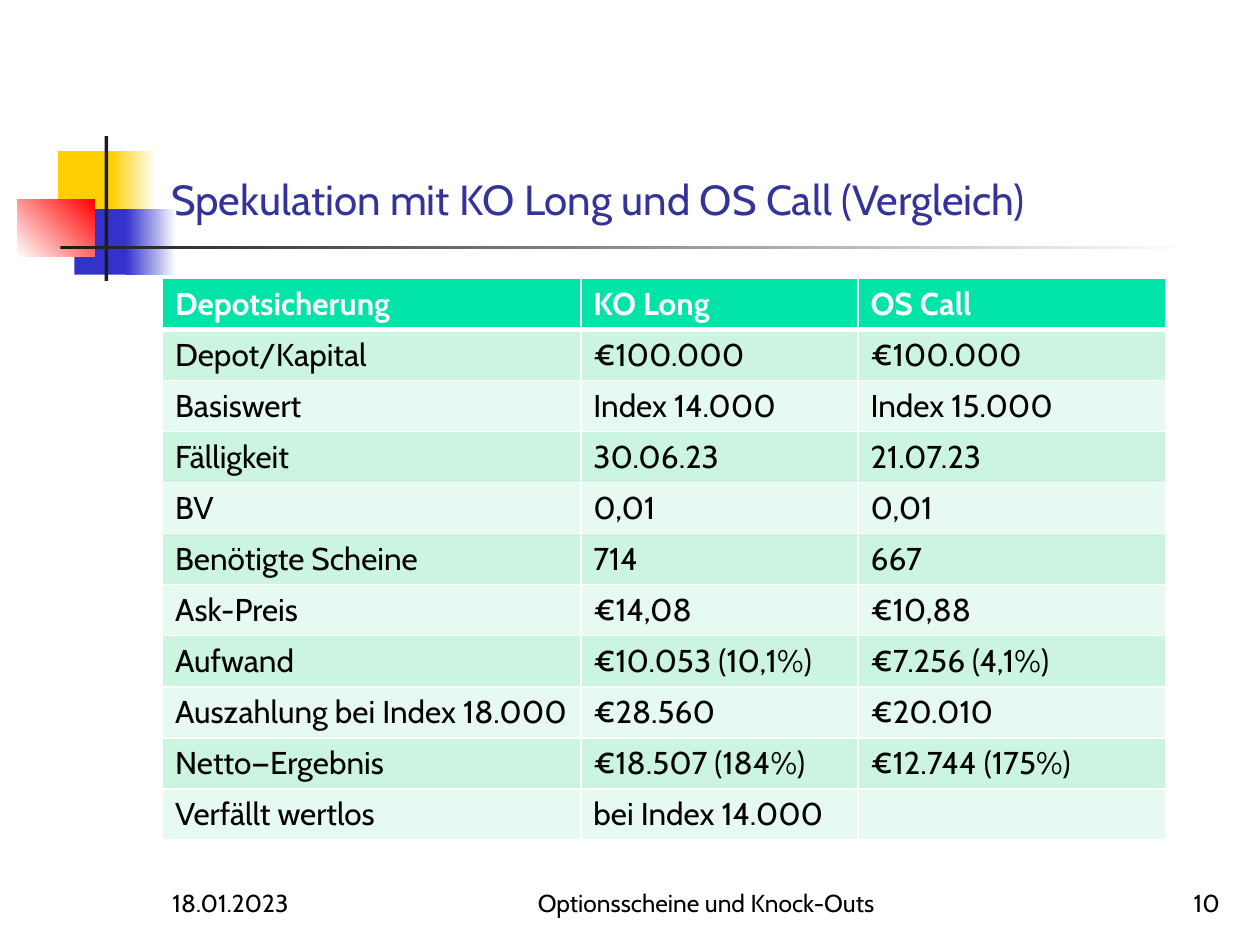
from lxml.etree import SubElement
from pptx import Presentation
from pptx.dml.color import RGBColor
from pptx.enum.shapes import MSO_SHAPE as SHAPE
from pptx.enum.text import MSO_ANCHOR as ANCHOR, PP_ALIGN as ALIGN
from pptx.oxml.ns import qn
from pptx.util import Inches, Pt

FONT = "Cabin"
WHITE = RGBColor(0xFF, 0xFF, 0xFF)
BLACK = RGBColor(0x00, 0x00, 0x00)
CHARCOAL = RGBColor(0x1C, 0x1C, 0x1C)
YELLOW = RGBColor(0xFF, 0xCF, 0x01)
BLUE = RGBColor(0x33, 0x33, 0xCC)
RED = RGBColor(0xFF, 0x00, 0x00)
INDIGO = RGBColor(0x33, 0x33, 0x99)
GREEN = RGBColor(0x00, 0xE4, 0xA8)
MINT = RGBColor(0xCC, 0xF5, 0xE1)
PALE_MINT = RGBColor(0xE7, 0xFA, 0xF1)

WIDTH, HEIGHT = Inches(10), Inches(7.5)
GRID_COLS, GRID_ROWS = 1000, 750

ROWS = [
    ("Depotsicherung", "KO Long", "OS Call"),
    ("Depot/Kapital", "€100.000", "€100.000"),
    ("Basiswert", "Index 14.000", "Index 15.000"),
    ("Fälligkeit", "30.06.23", "21.07.23"),
    ("BV", "0,01", "0,01"),
    ("Benötigte Scheine", "714", "667"),
    ("Ask-Preis", "€14,08", "€10,88"),
    ("Aufwand", "€10.053 (10,1%)", "€7.256 (4,1%)"),
    ("Auszahlung bei Index 18.000", "€28.560", "€20.010"),
    ("Netto—Ergebnis", "€18.507 (184%)", "€12.744 (175%)"),
    ("Verfällt wertlos", "bei Index 14.000", ""),
]
COLUMN_SHARES = (332, 220, 244)


def place(col, row, cols, rows):
    x, y = WIDTH / GRID_COLS, HEIGHT / GRID_ROWS
    return [round(v) for v in (col * x, row * y, cols * x, rows * y)]


def write(tf, text, size=14, color=BLACK, bold=False, align=ALIGN.LEFT):
    p = tf.paragraphs[0]
    p.alignment = align
    r = p.add_run()
    r.text = text
    r.font.name = FONT
    r.font.size = Pt(size)
    r.font.bold = bold
    r.font.color.rgb = color


def add_block(s, box, start, end=None, angle=0):
    sp = s.shapes.add_shape(SHAPE.RECTANGLE, *place(*box))
    sp.shadow.inherit = False
    sp.line.fill.background()
    if end is None:
        sp.fill.solid()
        sp.fill.fore_color.rgb = start
        return
    sp.fill.gradient()
    sp.fill.gradient_angle = angle
    for stop, color, position in zip(sp.fill.gradient_stops, (start, end), (0, 1)):
        stop.color.rgb = color
        stop.position = position


def add_emblem(s, box):
    left, top, width, height = box
    for col, row, cols, rows, *colors in (
        (32, 12, 48, 52, YELLOW),
        (74, 12, 36, 52, YELLOW, WHITE),
        (45, 58, 46, 52, BLUE),
        (86, 58, 40, 52, BLUE, WHITE),
        (0, 50, 61, 46, WHITE, RED, 45),
        (69, 0, 3, height, CHARCOAL),
        (34, 87, width - 34, 3, CHARCOAL, WHITE),
    ):
        add_block(s, (left + col, top + row, cols, rows), *colors)


def add_title(s, box, text):
    title = s.shapes.title
    title.left, title.top, title.width, title.height = place(*box)
    title.text_frame.vertical_anchor = ANCHOR.BOTTOM
    title.text_frame.word_wrap = True
    write(title.text_frame, text, size=24, color=INDIGO)


def add_footer(s, box):
    left, top, width, height = box
    for col, cols, text, align in (
        (0, 208, "18.01.2023", ALIGN.LEFT),
        (275, 317, "Optionsscheine und Knock-Outs", ALIGN.CENTER),
        (width - 208, 208, "10", ALIGN.RIGHT),
    ):
        sp = s.shapes.add_textbox(*place(left + col, top, cols, height))
        tf = sp.text_frame
        tf.word_wrap = True
        tf.vertical_anchor = ANCHOR.BOTTOM
        write(tf, text, align=align)


def add_borders(cell, top, bottom):
    tc_pr = cell._tc.get_or_add_tcPr()
    for side, width in (("L", 1), ("R", 1), ("T", top), ("B", bottom)):
        ln = SubElement(tc_pr, qn(f"a:ln{side}"), w=str(Pt(width)))
        fill = SubElement(ln, qn("a:solidFill"))
        SubElement(fill, qn("a:srgbClr"), val=str(WHITE))


def add_comparison(s, box):
    x, y, w, h = place(*box)
    table = s.shapes.add_table(len(ROWS), len(COLUMN_SHARES), x, y, w, h).table
    for column, share in zip(table.columns, COLUMN_SHARES):
        column.width = round(w * share / sum(COLUMN_SHARES))
    for i, texts in enumerate(ROWS):
        table.rows[i].height = round(h / len(ROWS))
        header = i == 0
        fill = GREEN if header else (PALE_MINT, MINT)[i % 2]
        for j, text in enumerate(texts):
            cell = table.cell(i, j)
            add_borders(cell, top=3 if i == 1 else 1, bottom=3 if header else 1)
            cell.fill.solid()
            cell.fill.fore_color.rgb = fill
            if text:
                write(cell.text_frame, text, size=18, bold=header,
                      color=WHITE if header else BLACK)


def main():
    prs = Presentation()
    prs.slide_width, prs.slide_height = WIDTH, HEIGHT
    s = prs.slides.add_slide(prs.slide_layouts[5])
    add_emblem(s, (14, 108, 934, 115))
    add_title(s, (126, 23, 852, 160), "Spekulation mit KO Long und OS Call (Vergleich)")
    add_footer(s, (127, 683, 851, 50))
    add_comparison(s, (129, 221, 796, 446))
    prs.save("out.pptx")


if __name__ == "__main__":
    main()
